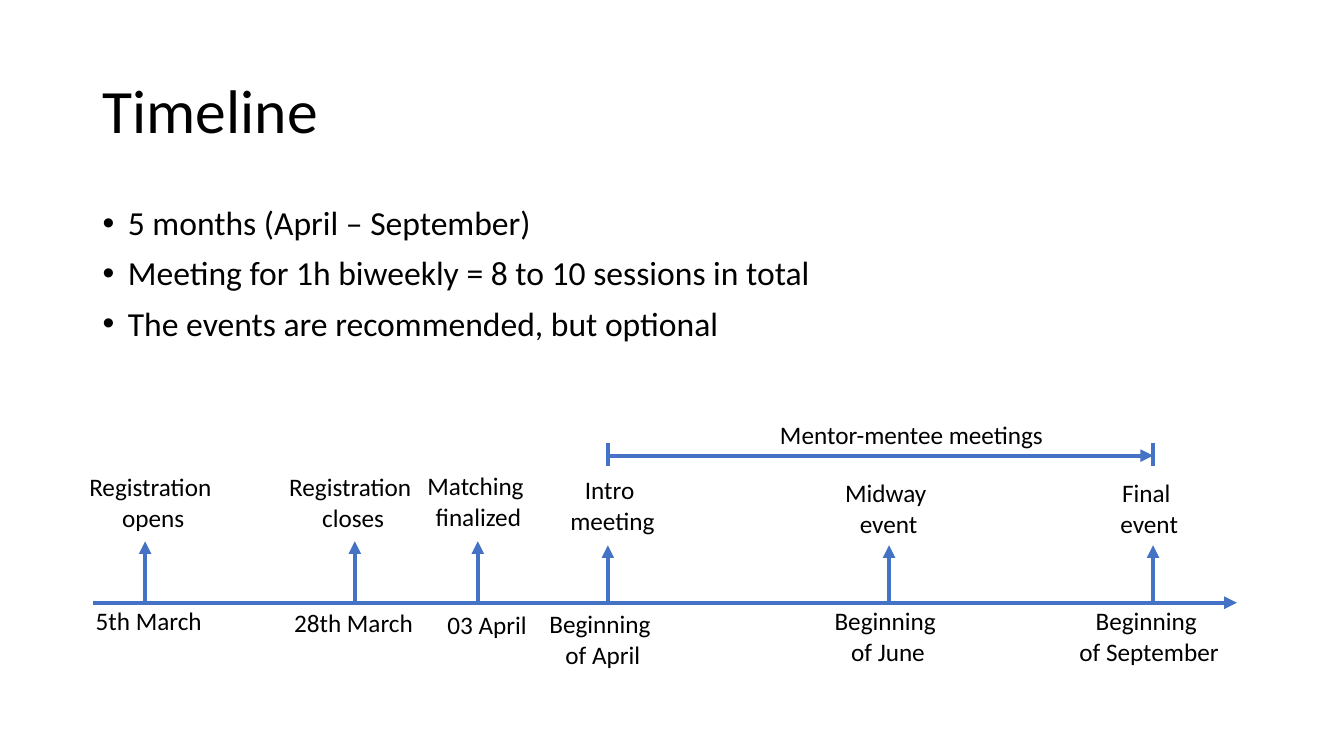
from typing import NamedTuple

from lxml.etree import SubElement
from pptx import Presentation
from pptx.dml.color import RGBColor
from pptx.enum.shapes import MSO_CONNECTOR
from pptx.enum.text import MSO_ANCHOR, MSO_AUTO_SIZE, PP_ALIGN
from pptx.oxml.ns import qn
from pptx.util import Inches, Pt

FONT = "Calibri"
BLACK, BLUE = "000000", "4472C4"

# All positions and lengths are percentages of the slide's width or height.
LEFT, CONTENT_WIDTH = 6.9, 86.25
AXIS_Y, AXIS_END = 79.73, 92.03
MEETINGS_Y = 60.27
LINE_HEIGHTS = {1: 5.33, 2: 9.47}


class Label(NamedTuple):
    text: str
    left: float
    top: float
    width: float


class Milestone(NamedTuple):
    x: float
    tip: float
    event: Label
    date: Label


MILESTONES = [
    Milestone(10.8, 71.6, Label("Registration \nopens", 5.85, 61.73, 11.1),
              Label("5th March", 6.38, 79.47, 9.53)),
    Milestone(26.4, 71.6, Label("Registration\n closes", 20.7, 61.73, 10.73),
              Label("28th March", 21.15, 79.73, 10.43)),
    Milestone(35.55, 71.6, Label("Matching \nfinalized", 30.98, 61.6, 9.23),
              Label("03 April", 32.55, 80, 7.5)),
    Milestone(45.23, 72.13, Label("Intro \nmeeting", 41.63, 62.13, 7.88),
              Label("Beginning \nof April", 40.13, 79.87, 9.45)),
    Milestone(66.15, 72.13, Label("Midway \nevent", 62.1, 62.53, 8.03),
              Label("Beginning \nof June", 61.35, 79.47, 9.45)),
    Milestone(85.8, 72.13, Label("Final \nevent", 82.58, 62.53, 5.85),
              Label("Beginning \nof September", 79.5, 79.47, 12)),
]
MEETINGS_LABEL = Label("Mentor-mentee meetings", 57.3, 54.8, 21.98)
BULLETS = [
    "5 months (April – September)",
    "Meeting for 1h biweekly = 8 to 10 sessions in total",
    "The events are recommended, but optional",
]

prs = Presentation()
prs.slide_width, prs.slide_height = Inches(13.333), Inches(7.5)
s = prs.slides.add_slide(prs.slide_layouts[6])


def across(share: float) -> int:
    return round(prs.slide_width * share / 100)


def down(share: float) -> int:
    return round(prs.slide_height * share / 100)


def color(value: str) -> RGBColor:
    return RGBColor.from_string(value)


def add_text(text: str, left: float, top: float, width: float, height: float, *,
             size: float = 18, align: PP_ALIGN = PP_ALIGN.LEFT,
             anchor: MSO_ANCHOR = MSO_ANCHOR.TOP, wrap: bool = True,
             spacing: float = 1, before: float = 0, bullet: bool = False) -> None:
    """Add a text box with one paragraph for each line of the text."""
    sp = s.shapes.add_textbox(across(left), down(top), across(width), down(height))
    tf = sp.text_frame
    tf.word_wrap, tf.vertical_anchor = wrap, anchor
    tf.auto_size = MSO_AUTO_SIZE.NONE if wrap else MSO_AUTO_SIZE.SHAPE_TO_FIT_TEXT
    for i, line in enumerate(text.split("\n")):
        p = tf.add_paragraph() if i else tf.paragraphs[0]
        p.alignment, p.line_spacing, p.space_before = align, spacing, Pt(before)
        if bullet:
            pPr = p._p.get_or_add_pPr()
            pPr.set("marL", str(Inches(0.25)))
            pPr.set("indent", str(Inches(-0.25)))
            SubElement(pPr, qn("a:buFont"), typeface="Arial")
            SubElement(pPr, qn("a:buChar"), char="•")
        r = p.add_run()
        r.text = line
        r.font.name, r.font.size = FONT, Pt(size)
        r.font.color.rgb = color(BLACK)


def add_label(label: Label) -> None:
    """Add an unwrapped timeline label, centred when it has two lines."""
    lines = label.text.count("\n") + 1
    add_text(*label, LINE_HEIGHTS[lines], wrap=False,
             align=PP_ALIGN.CENTER if lines > 1 else PP_ALIGN.LEFT)


def add_line(x1: float, y1: float, x2: float, y2: float, arrow: bool = True) -> None:
    c = s.shapes.add_connector(MSO_CONNECTOR.STRAIGHT,
                               across(x1), down(y1), across(x2), down(y2))
    c.line.color.rgb, c.line.width = color(BLUE), Pt(3)
    if arrow:
        SubElement(c.line._get_or_add_ln(), qn("a:tailEnd"), type="triangle")
    SubElement(c._element.spPr, qn("a:effectLst"))


def main() -> None:
    add_text("Timeline", LEFT, 5.33, CONTENT_WIDTH, 19.33, size=44,
             anchor=MSO_ANCHOR.MIDDLE, spacing=0.9)
    add_text("\n".join(BULLETS), LEFT, 26.67, CONTENT_WIDTH, 22.67, size=24,
             spacing=0.9, before=10, bullet=True)

    add_line(LEFT, AXIS_Y, AXIS_END, AXIS_Y)
    for m in MILESTONES:
        add_line(m.x, AXIS_Y, m.x, m.tip)
        add_label(m.event)
        add_label(m.date)

    start, end = MILESTONES[3].x, MILESTONES[-1].x
    add_line(start, MEETINGS_Y, end, MEETINGS_Y)
    add_label(MEETINGS_LABEL)
    for x in (start, end):
        add_line(x, 58.6, x, 61.67, arrow=False)

    prs.save("out.pptx")


if __name__ == "__main__":
    main()
